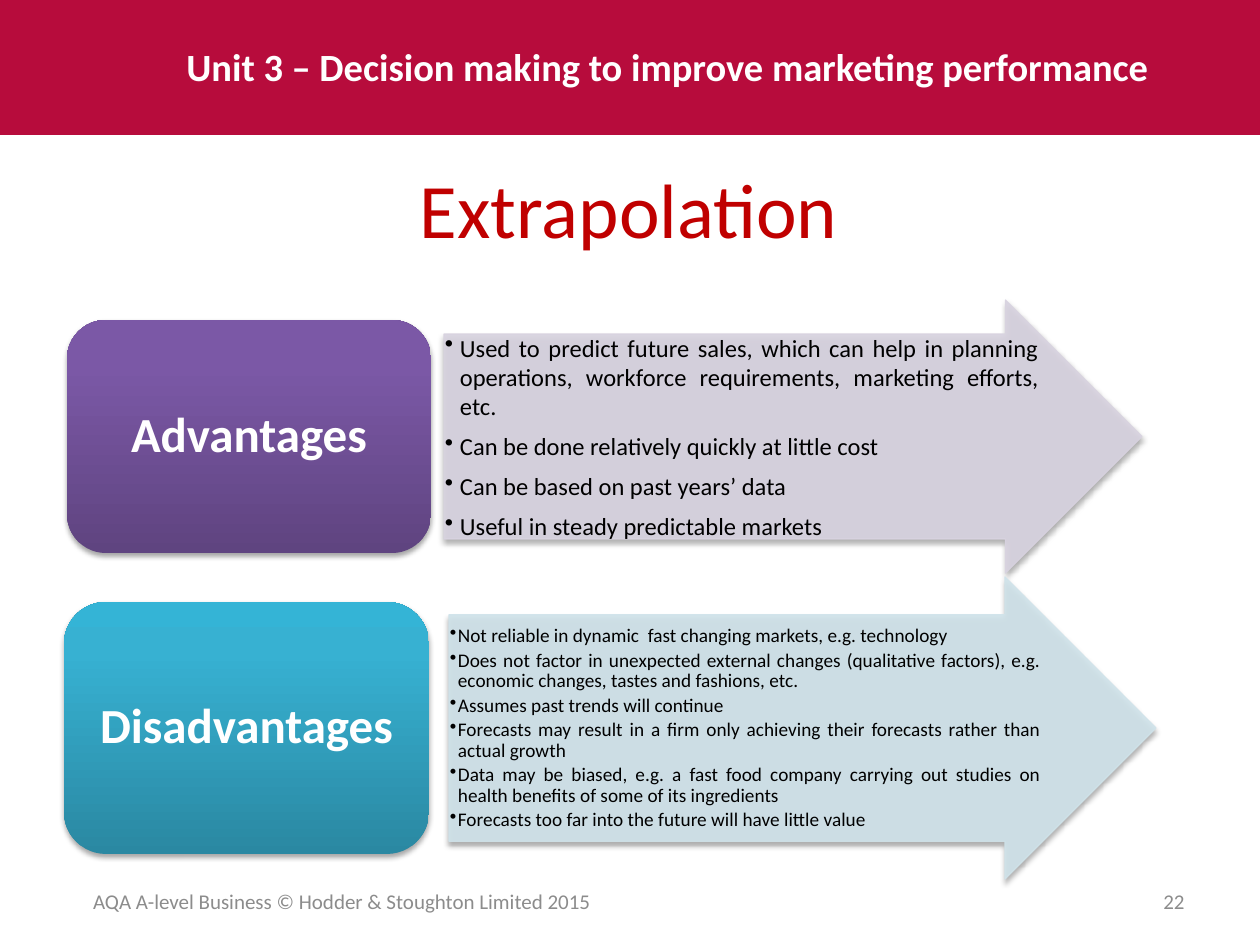
from lxml import etree
from pptx import Presentation
from pptx.dml.color import RGBColor
from pptx.enum.shapes import MSO_SHAPE
from pptx.enum.text import MSO_ANCHOR, PP_ALIGN
from pptx.oxml import parse_xml
from pptx.oxml.ns import nsdecls, qn
from pptx.util import Pt

PX = 914400 / 126
NS = nsdecls("a")


def px(n):
    return round(n * PX)


def rgb(value):
    return RGBColor.from_string(value)


def set_attrs(obj, values):
    for name, value in values.items():
        setattr(obj, name, value)


class SlideBuilder:
    font = "Calibri"

    def __init__(self, prs):
        self.s = prs.slides.add_slide(prs.slide_layouts[6])

    def shape(self, kind, box, color=None):
        sp = self.s.shapes.add_shape(kind, *map(px, box))
        sp.shadow.inherit = False
        sp.line.fill.background()
        if color:
            sp.fill.solid()
            sp.fill.fore_color.rgb = rgb(color)
        return sp

    def shadow(self, sp):
        effects = sp._element.spPr.find(qn("a:effectLst"))
        effects.append(parse_xml(
            f'<a:outerShdw {NS} blurRad="{Pt(3.1)}" dist="{Pt(1.8)}" dir="5400000" '
            'rotWithShape="0"><a:srgbClr val="000000"><a:alpha val="35000"/>'
            '</a:srgbClr></a:outerShdw>'))

    def arrow(self, box, color):
        sp = self.shape(MSO_SHAPE.RIGHT_ARROW, box, color)
        sp.adjustments[0], sp.adjustments[1] = 0.75, 0.5
        sp.line.color.rgb = rgb(color)
        sp.line.width = Pt(0.75)
        for clr in sp._element.spPr.iter(qn("a:srgbClr")):
            etree.SubElement(clr, qn("a:alpha")).set("val", "90000")
        self.shadow(sp)

    def card(self, box, stops):
        sp = self.shape(MSO_SHAPE.ROUNDED_RECTANGLE, box)
        sp.fill.gradient()
        sp.fill.gradient_angle = 90
        gs_lst = sp._element.spPr.find(".//" + qn("a:gsLst"))
        for gs in list(gs_lst):
            gs_lst.remove(gs)
        for pos, color in zip((0, 80, 100), stops):
            gs_lst.append(parse_xml(
                f'<a:gs {NS} pos="{pos * 1000}"><a:srgbClr val="{color}"/></a:gs>'))
        self.shadow(sp)

    def text(self, box, lines, size, color, align=PP_ALIGN.LEFT, bold=False,
             anchor=MSO_ANCHOR.MIDDLE, inset=None, indent=0, spacing=None):
        tf = self.s.shapes.add_textbox(*map(px, box)).text_frame
        set_attrs(tf, {"word_wrap": True, "vertical_anchor": anchor})
        if inset is not None:
            for side in ("left", "right", "top", "bottom"):
                setattr(tf, f"margin_{side}", px(inset))
        for i, line in enumerate(lines):
            p = tf.paragraphs[0] if i == 0 else tf.add_paragraph()
            set_attrs(p, {"alignment": align, **(spacing or {})})
            if indent:
                pPr = p._p.get_or_add_pPr()
                pPr.set("marL", str(px(indent)))
                pPr.set("indent", str(-px(indent)))
                etree.SubElement(pPr, qn("a:buChar")).set("char", "•")
            r = p.add_run()
            r.text = line
            set_attrs(r.font, {"name": self.font, "size": Pt(size), "bold": bold})
            r.font.color.rgb = rgb(color)


# One entry per row: arrow with bullets, card with label
ROWS = [
    {"arrow": (444, 300, 698, 273), "tint": "D8D3E0",
     "body": (444, 334, 596, 205), "size": 14, "indent": 15,
     "spacing": {"space_after": Pt(6)},
     "card": (67, 320, 364, 233), "stops": ("5F4480", "7B58A6", "7C57A8"),
     "label": "Advantages",
     "points": [
         "Used to predict future sales, which can help in planning operations, "
         "workforce requirements, marketing efforts, etc.",
         "Can be done relatively quickly at little cost",
         "Can be based on past years’ data",
         "Useful in steady predictable markets"]},
    {"arrow": (449, 577, 707, 302), "tint": "D0E3EA",
     "body": (449, 615, 593, 227), "size": 11, "indent": 8,
     "spacing": {"line_spacing": 0.9, "space_after": Pt(2)},
     "card": (64, 602, 365, 252), "stops": ("2A88A2", "37B1D2", "34B4D6"),
     "label": "Disadvantages",
     "points": [
         "Not reliable in dynamic  fast changing markets, e.g. technology",
         "Does not factor in unexpected external changes (qualitative factors), "
         "e.g. economic changes, tastes and fashions, etc.",
         "Assumes past trends will continue",
         "Forecasts may result in a firm only achieving their forecasts rather "
         "than actual growth",
         "Data may be biased, e.g. a fast food company carrying out studies on "
         "health benefits of some of its ingredients",
         "Forecasts too far into the future will have little value"]},
]


def main():
    prs = Presentation()
    prs.slide_width, prs.slide_height = px(1260), px(945)
    b = SlideBuilder(prs)

    # Header band
    b.shape(MSO_SHAPE.RECTANGLE, (0, 0, 1260, 135), "B70C3C")
    b.text((174, 37, 1012, 59),
           ["Unit 3 – Decision making to improve marketing performance"],
           22, "FFFFFF", bold=True, anchor=MSO_ANCHOR.TOP)

    # Advantages and disadvantages
    for row in ROWS:
        b.arrow(row["arrow"], row["tint"])
        b.text(row["body"], row["points"], row["size"], "000000",
               PP_ALIGN.JUSTIFY, inset=1, indent=row["indent"],
               spacing=row["spacing"])
        b.card(row["card"], row["stops"])
        b.text(row["card"], [row["label"]], 28, "FFFFFF", PP_ALIGN.CENTER,
               bold=True, spacing={"line_spacing": 0.9})

    # Title
    b.text((44, 155, 1187, 100), ["Extrapolation "], 44, "C00000",
           PP_ALIGN.CENTER, anchor=MSO_ANCHOR.TOP)

    # Footer
    b.text((64, 876, 556, 50),
           ["AQA A-level Business © Hodder & Stoughton Limited 2015"],
           12, "8C8C8C", PP_ALIGN.CENTER)
    b.text((903, 876, 294, 50), ["22"], 12, "8C8C8C", PP_ALIGN.RIGHT)

    prs.save("out.pptx")


if __name__ == "__main__":
    main()
